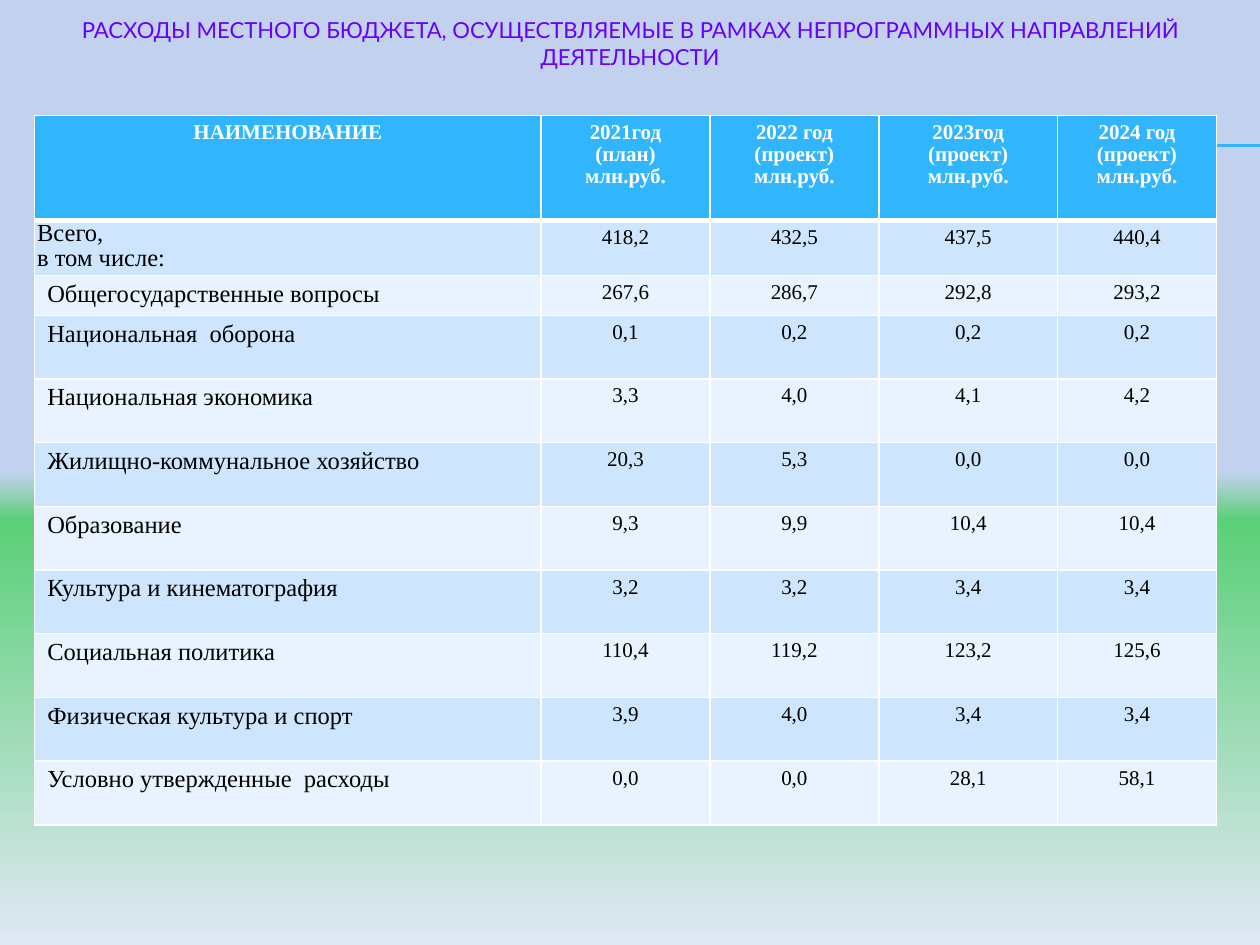
"""Builds a slide with the table of non-programme local budget spending."""
from copy import deepcopy

from lxml import etree
from pptx import Presentation
from pptx.dml.color import RGBColor
from pptx.enum.shapes import MSO_CONNECTOR
from pptx.enum.text import MSO_ANCHOR, MSO_AUTO_SIZE, PP_ALIGN
from pptx.oxml.ns import qn
from pptx.util import Pt

STRAIGHT = MSO_CONNECTOR.STRAIGHT
TOP = MSO_ANCHOR.TOP
NO_AUTOFIT = MSO_AUTO_SIZE.NONE
LEFT, CENTER = PP_ALIGN.LEFT, PP_ALIGN.CENTER

WHITE = RGBColor(0xFF, 0xFF, 0xFF)
BLACK = RGBColor(0, 0, 0)
VIOLET = RGBColor(0x66, 0x00, 0xFF)
SKY = RGBColor(0x31, 0xB6, 0xFD)
BANDS = (RGBColor(0xE8, 0xF3, 0xFF), RGBColor(0xCE, 0xE5, 0xFE))
BACKGROUND = (
    (0.5, RGBColor(0xC2, 0xD1, 0xED)),
    (0.55, RGBColor(0x5B, 0xD0, 0x78)),
    (1, RGBColor(0xE1, 0xE8, 0xF5)),
)

TITLE = ("РАСХОДЫ МЕСТНОГО БЮДЖЕТА, ОСУЩЕСТВЛЯЕМЫЕ В РАМКАХ "
         "НЕПРОГРАММНЫХ НАПРАВЛЕНИЙ ДЕЯТЕЛЬНОСТИ")
BUDGET = (
    ("НАИМЕНОВАНИЕ", "2021год\n(план)\nмлн.руб.", "2022 год\n(проект)\nмлн.руб.",
     "2023год\n(проект)\nмлн.руб.", "2024 год\n(проект)\nмлн.руб."),
    ("Всего,\nв том числе:", "418,2", "432,5", "437,5", "440,4"),
    ("Общегосударственные вопросы", "267,6", "286,7", "292,8", "293,2"),
    ("Национальная  оборона", "0,1", "0,2", "0,2", "0,2"),
    ("Национальная экономика", "3,3", "4,0", "4,1", "4,2"),
    ("Жилищно-коммунальное хозяйство", "20,3", "5,3", "0,0", "0,0"),
    ("Образование", "9,3", "9,9", "10,4", "10,4"),
    ("Культура и кинематография", "3,2", "3,2", "3,4", "3,4"),
    ("Социальная политика", "110,4", "119,2", "123,2", "125,6"),
    ("Физическая культура и спорт", "3,9", "4,0", "3,4", "3,4"),
    ("Условно утвержденные  расходы", "0,0", "0,0", "28,1", "58,1"),
)
COLUMN_WIDTHS = (289.4, 96.5, 96.5, 102.2, 90.7)
ROW_HEIGHTS = (60, 31.4, 22.8) + (36.4,) * 8
RULE_HEIGHTS = (82.8, 83.5)


def paint_background(slide):
    fill = slide.background.fill
    fill.gradient()
    fill.gradient_angle = 270
    stops = slide.element.find(".//" + qn("a:gsLst"))
    stops.append(deepcopy(stops[0]))
    for stop, (position, color) in zip(fill.gradient_stops, BACKGROUND):
        stop.position = position
        stop.color.rgb = color


def add_rule(slide, y):
    rule = slide.shapes.add_connector(STRAIGHT, Pt(40.3), Pt(y), Pt(720), Pt(y))
    rule.line.color.rgb = SKY
    rule.line.width = Pt(0.75)
    etree.SubElement(rule.element.spPr, qn("a:effectLst"))


def format_text(frame, font_name, size, color, align, bold=False):
    for paragraph in frame.paragraphs:
        paragraph.alignment = align
        for run in paragraph.runs:
            run.font.name = font_name
            run.font.size = Pt(size)
            run.font.bold = bold
            run.font.color.rgb = color


def add_title(slide):
    title = slide.shapes.title
    title.left, title.top, title.width, title.height = Pt(36), Pt(9.4), Pt(648), Pt(45.4)
    frame = title.text_frame
    frame.text = TITLE
    frame.word_wrap = True
    frame.auto_size = NO_AUTOFIT
    frame.vertical_anchor = TOP
    frame.margin_top = frame.margin_bottom = 0
    format_text(frame, "Lato", 12.6, VIOLET, CENTER)


def set_borders(cell, row):
    widths = {"L": 1, "R": 1, "T": 3 if row == 1 else 1, "B": 3 if row == 0 else 1}
    properties = cell._tc.get_or_add_tcPr()
    for index, (side, width) in enumerate(widths.items()):
        border = etree.Element(qn("a:ln" + side), w=str(Pt(width)))
        fill = etree.SubElement(border, qn("a:solidFill"))
        etree.SubElement(fill, qn("a:srgbClr"), val=str(WHITE))
        properties.insert(index, border)


def format_cell(cell, row, column):
    header = row == 0
    label = column == 0 and not header
    cell.fill.solid()
    cell.fill.fore_color.rgb = SKY if header else BANDS[row % 2]
    set_borders(cell, row)
    format_text(cell.text_frame, "Times New Roman", 14 if label else 12,
                WHITE if header else BLACK, LEFT if label else CENTER, header)
    for paragraph in cell.text_frame.paragraphs:
        paragraph.line_spacing = 0.95
    if label and row == 1:
        cell.margin_left = cell.margin_right = Pt(1.4)
        cell.margin_top = cell.margin_bottom = 0


def add_budget(slide):
    budget = slide.shapes.add_table(
        len(BUDGET), len(COLUMN_WIDTHS), Pt(19.8), Pt(66),
        Pt(sum(COLUMN_WIDTHS)), Pt(sum(ROW_HEIGHTS))).table
    for column, width in zip(budget.columns, COLUMN_WIDTHS):
        column.width = Pt(width)
    for row, height in zip(budget.rows, ROW_HEIGHTS):
        row.height = Pt(height)
    for row, entries in enumerate(BUDGET):
        for column, entry in enumerate(entries):
            cell = budget.cell(row, column)
            cell.text_frame.text = entry
            format_cell(cell, row, column)


def main():
    deck = Presentation()
    deck.slide_width, deck.slide_height = Pt(720), Pt(540)
    slide = deck.slides.add_slide(deck.slide_layouts[5])
    paint_background(slide)
    for y in RULE_HEIGHTS:
        add_rule(slide, y)
    add_title(slide)
    add_budget(slide)
    deck.save("out.pptx")


if __name__ == "__main__":
    main()
